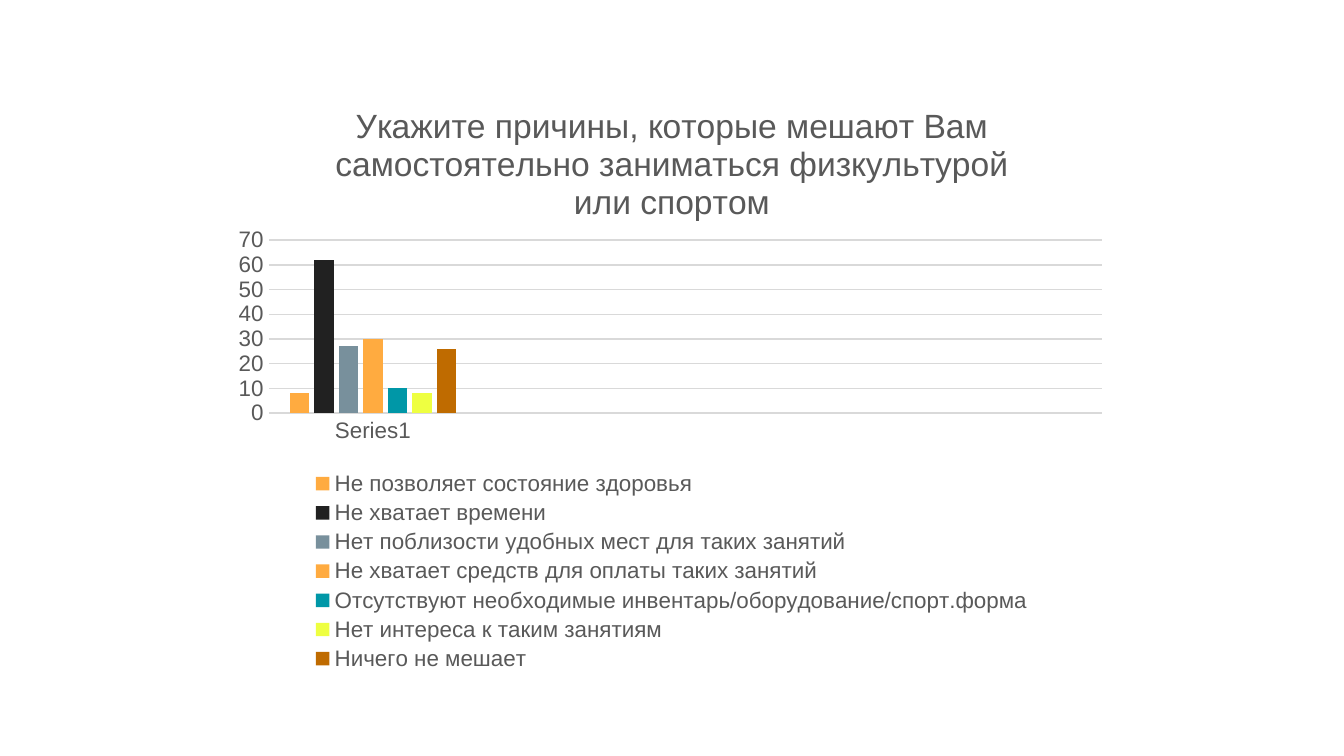
from lxml import etree
from pptx import Presentation
from pptx.chart.data import CategoryChartData
from pptx.dml.color import RGBColor
from pptx.enum.chart import XL_CHART_TYPE, XL_LEGEND_POSITION, XL_TICK_MARK
from pptx.oxml.ns import qn
from pptx.util import Pt

COLUMNS = XL_CHART_TYPE.COLUMN_CLUSTERED
BOTTOM = XL_LEGEND_POSITION.BOTTOM
NO_TICK = XL_TICK_MARK.NONE

EMU_PER_PX = 914400 / 134.4
BLANK_LAYOUT = 6

QUESTION = ("Укажите причины, которые мешают Вам самостоятельно "
            "заниматься физкультурой или спортом")
CATEGORIES = ["Series1", "", "", ""]
REASONS = [
    ("Не позволяет состояние здоровья", 8, "FFAB40"),
    ("Не хватает времени", 62, "212121"),
    ("Нет поблизости удобных мест для таких занятий", 27, "78909C"),
    ("Не хватает средств для оплаты таких занятий", 30, "FFAB40"),
    ("Отсутствуют необходимые инвентарь/оборудование/спорт.форма", 10, "0097A7"),
    ("Нет интереса к таким занятиям", 8, "EEFF41"),
    ("Ничего не мешает", 26, "BF6B00"),
]


def px(length):
    return round(length * EMU_PER_PX)


def color(hex_code):
    return RGBColor.from_string(hex_code)


class SurveySlide:
    font_name = "Arial"
    text_color = "595959"
    rule_color = "D9D9D9"

    def __init__(self, slide):
        self.slide = slide

    def style_font(self, font, size):
        font.name = self.font_name
        font.size = Pt(size)
        font.bold = False
        font.color.rgb = color(self.text_color)

    def style_rule(self, line):
        line.color.rgb = color(self.rule_color)
        line.width = Pt(0.75)

    def column_chart(self, left, top, width, height, title, categories, answers):
        """Each answer is (name, value, colour); only the first category is filled."""
        data = CategoryChartData()
        data.categories = categories
        for name, value, _ in answers:
            data.add_series(name, [value] + [None] * (len(categories) - 1))
        chart = self.slide.shapes.add_chart(
            COLUMNS, px(left), px(top), px(width), px(height), data).chart
        self.style_font(chart.font, 12)

        plot = chart.plots[0]
        plot.vary_by_categories = False
        plot.gap_width = 219
        plot.overlap = -27
        for series, (_, _, fill) in zip(plot.series, answers):
            series.format.fill.solid()
            series.format.fill.fore_color.rgb = color(fill)
            series.invert_if_negative = False

        self.chart_title(chart, title)
        self.chart_axes(chart)
        self.chart_legend(chart)
        return chart

    def chart_title(self, chart, title):
        chart.has_title = True
        chart.chart_title.include_in_layout = False
        heading = chart.chart_title.text_frame.paragraphs[0]
        heading.text = title
        self.style_font(heading.font, 18)

    def chart_axes(self, chart):
        for axis in (chart.category_axis, chart.value_axis):
            axis.major_tick_mark = NO_TICK
            axis.minor_tick_mark = NO_TICK
            self.style_font(axis.tick_labels.font, 12)
        self.style_rule(chart.category_axis.format.line)
        values = chart.value_axis
        values.minimum_scale, values.maximum_scale, values.major_unit = 0, 70, 10
        values.format.line.fill.background()
        values.has_major_gridlines = True
        self.style_rule(values.major_gridlines.format.line)

    def chart_legend(self, chart):
        chart.has_legend = True
        chart.legend.position = BOTTOM
        chart.legend.include_in_layout = False
        self.style_font(chart.legend.font, 12)

    def place_plot(self, chart, x, y, w, h):
        """Fix the inner plot area, given as fractions of the chart."""
        plot_area = chart.plots[0]._element.getparent()
        for old_layout in plot_area.findall(qn("c:layout")):
            plot_area.remove(old_layout)
        layout = etree.Element(qn("c:layout"))
        manual = etree.SubElement(layout, qn("c:manualLayout"))
        settings = {"layoutTarget": "inner", "xMode": "edge", "yMode": "edge",
                    "x": x, "y": y, "w": w, "h": h}
        for tag, value in settings.items():
            etree.SubElement(manual, qn(f"c:{tag}")).set("val", str(value))
        plot_area.insert(0, layout)


def main():
    deck = Presentation()
    deck.slide_width, deck.slide_height = px(1344), px(756)
    survey = SurveySlide(deck.slides.add_slide(deck.slide_layouts[BLANK_LAYOUT]))
    chart = survey.column_chart(224, 79, 896, 597, QUESTION, CATEGORIES, REASONS)
    survey.place_plot(chart, 0.05, 0.27, 0.93, 0.29)
    deck.save("out.pptx")


if __name__ == "__main__":
    main()
